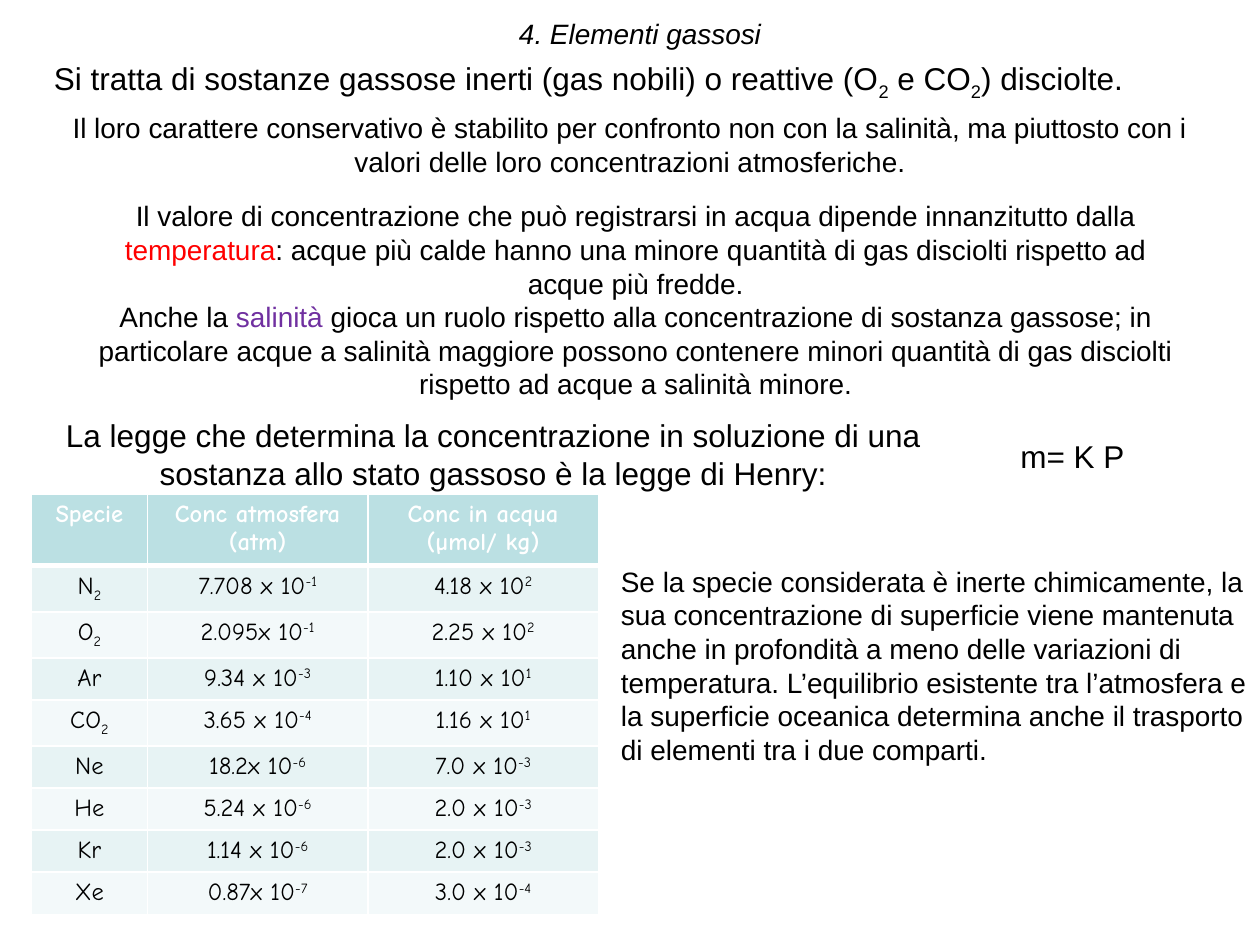
from lxml import etree
from pptx import Presentation
from pptx.dml.color import RGBColor
from pptx.enum.text import MSO_ANCHOR, MSO_AUTO_SIZE, PP_ALIGN
from pptx.oxml.ns import qn
from pptx.util import Inches, Pt

LEFT, CENTER = PP_ALIGN.LEFT, PP_ALIGN.CENTER
TOP = MSO_ANCHOR.TOP
GROW = MSO_AUTO_SIZE.SHAPE_TO_FIT_TEXT

BLACK = RGBColor(0x00, 0x00, 0x00)
WHITE = RGBColor(0xFF, 0xFF, 0xFF)
RED = RGBColor(0xFF, 0x00, 0x00)
PURPLE = RGBColor(0x70, 0x30, 0xA0)
HEADER_FILL = RGBColor(0xBB, 0xE0, 0xE3)
BAND_FILLS = (RGBColor(0xE7, 0xF3, 0xF4), RGBColor(0xF3, 0xF9, 0xFA))

BODY_FONT, TABLE_FONT = "Arial", "Comic Neue"
SUB, SUPER = -25, 30

# Table content: species, its subscript, then (mantissa, exponent) pairs
HEADERS = ("Specie", "Conc atmosfera (atm)", "Conc in acqua (µmol/ kg)")
GASES = (
    ("N", "2", "7.708 x 10", "-1", "4.18 x 10", "2"),
    ("O", "2", "2.095x 10", "-1", "2.25 x 10", "2"),
    ("Ar", "", "9.34 x 10", "-3", "1.10 x 10", "1"),
    ("CO", "2", "3.65 x 10", "-4", "1.16 x 10", "1"),
    ("Ne", "", "18.2x 10", "-6", "7.0 x 10", "-3"),
    ("He", "", "5.24 x 10", "-6", "2.0 x 10", "-3"),
    ("Kr", "", "1.14 x 10", "-6", "2.0 x 10", "-3"),
    ("Xe", "", "0.87x 10", "-7", "3.0 x 10", "-4"),
)
COLUMN_WIDTHS = (0.92, 1.75, 1.83)
HEADER_HEIGHT, ROW_HEIGHT = 0.57, 0.33


def write_text(frame, *paragraphs, size=16, font=BODY_FONT, color=BLACK,
               bold=False, italic=False, align=CENTER):
    """Each paragraph is a list of strings or (string, colour, baseline)."""
    for index, spans in enumerate(paragraphs):
        para = frame.paragraphs[0] if index == 0 else frame.add_paragraph()
        para.alignment = align
        for span in spans:
            text, own_color, baseline = (span, None, 0) if isinstance(span, str) else span
            run = para.add_run()
            run.text = text
            run.font.name = font
            run.font.size = Pt(size)
            run.font.bold = bold
            run.font.italic = italic
            run.font.color.rgb = own_color or color
            if baseline:
                run.font._element.set("baseline", str(baseline * 1000))


def fit_frame(frame):
    frame.word_wrap = True
    frame.auto_size = GROW
    frame.vertical_anchor = TOP


def add_title(page, text, left, top, width, height):
    title = page.shapes.title
    title.left, title.top = Inches(left), Inches(top)
    title.width, title.height = Inches(width), Inches(height)
    fit_frame(title.text_frame)
    write_text(title.text_frame, [text], italic=True)
    title.text_frame.paragraphs[0].line_spacing = 1.0
    title.text_frame.paragraphs[0].space_before = Pt(0)


def add_text(page, left, top, width, height, *paragraphs, **style):
    box = page.shapes.add_textbox(Inches(left), Inches(top), Inches(width), Inches(height))
    fit_frame(box.text_frame)
    write_text(box.text_frame, *paragraphs, **style)


def set_borders(cell, **widths):
    """Draw white borders; widths in points by side, 1 pt by default."""
    properties = cell._tc.get_or_add_tcPr()
    for index, side in enumerate("LRTB"):
        line = etree.Element(qn(f"a:ln{side}"), w=str(Pt(widths.get(side, 1))))
        fill = etree.SubElement(line, qn("a:solidFill"))
        etree.SubElement(fill, qn("a:srgbClr"), val=str(WHITE))
        properties.insert(index, line)


def fill_cell(cell, spans, fill, borders, **style):
    cell.fill.solid()
    cell.fill.fore_color.rgb = fill
    set_borders(cell, **borders)
    write_text(cell.text_frame, spans, size=14, font=TABLE_FONT, **style)


def add_gas_table(page, left, top):
    height = HEADER_HEIGHT + ROW_HEIGHT * len(GASES)
    table = page.shapes.add_table(
        len(GASES) + 1, len(HEADERS), Inches(left), Inches(top),
        Inches(sum(COLUMN_WIDTHS)), Inches(height)).table
    for column, width in zip(table.columns, COLUMN_WIDTHS):
        column.width = Inches(width)
    for index, row in enumerate(table.rows):
        row.height = Inches(ROW_HEIGHT if index else HEADER_HEIGHT)

    for column, header in enumerate(HEADERS):
        fill_cell(table.cell(0, column), [header], HEADER_FILL, {"B": 3},
                  color=WHITE, bold=True)
    for row, gas in enumerate(GASES, start=1):
        borders = {"T": 3} if row == 1 else {}
        for column in range(len(HEADERS)):
            base, script = gas[2 * column:2 * column + 2]
            spans = [base]
            if script:
                spans.append((script, None, SUPER if column else SUB))
            fill_cell(table.cell(row, column), spans, BAND_FILLS[(row - 1) % 2], borders)


def main():
    deck = Presentation()
    deck.slide_width, deck.slide_height = Inches(10), Inches(7.5)
    page = deck.slides.add_slide(deck.slide_layouts[5])

    # Heading and introduction
    add_title(page, "4. Elementi gassosi", 0.83, 0.08, 8.5, 0.37)
    add_text(page, 0.33, 0.42, 9.5, 0.4,
             ["Si tratta di sostanze gassose inerti (gas nobili) o reattive (O",
              ("2", None, SUB), " e CO", ("2", None, SUB), ") disciolte."],
             size=18, align=LEFT)
    add_text(page, 0.25, 0.83, 9.5, 0.64,
             ["Il loro carattere conservativo è stabilito per confronto non con la salinità, "
              "ma piuttosto con i valori delle loro concentrazioni atmosferiche."])

    # Effects of temperature and salinity
    add_text(page, 0.67, 1.53, 8.75, 1.72,
             ["Il valore di concentrazione che può registrarsi in acqua dipende "
              "innanzitutto dalla ", ("temperatura", RED, 0),
              ": acque più calde hanno una minore quantità di gas disciolti rispetto "
              "ad acque più fredde."],
             ["Anche la ", ("salinità", PURPLE, 0),
              " gioca un ruolo rispetto alla concentrazione di sostanza gassose; in "
              "particolare acque a salinità maggiore possono contenere minori quantità "
              "di gas disciolti rispetto ad acque a salinità minore."])

    # Henry's law
    add_text(page, 0.25, 3.25, 7.33, 0.71,
             ["La legge che determina la concentrazione in soluzione di una sostanza "
              "allo stato gassoso è la legge di Henry:"], size=18)
    add_text(page, 8, 3.42, 1.33, 0.4, ["m= K P"], size=18, align=LEFT)

    # Concentrations and closing remark
    add_gas_table(page, 0.25, 3.92)
    add_text(page, 4.83, 4.43, 5.17, 1.72,
             ["Se la specie considerata è inerte chimicamente, la sua concentrazione di "
              "superficie viene mantenuta anche in profondità a meno delle variazioni di "
              "temperatura. L’equilibrio esistente tra l’atmosfera e la superficie oceanica "
              "determina anche il trasporto di elementi tra i due comparti."], align=LEFT)

    deck.save("out.pptx")


if __name__ == "__main__":
    main()
